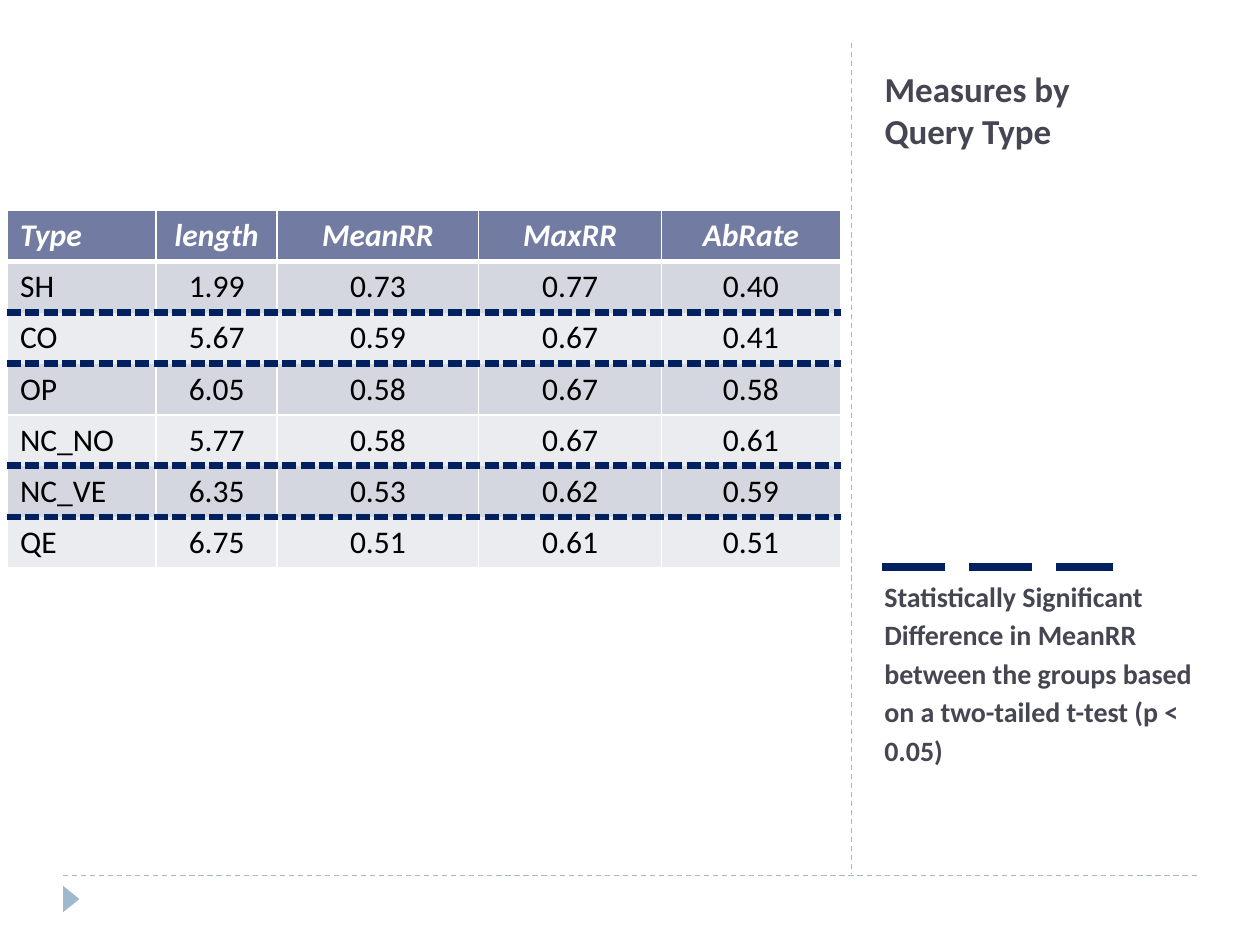
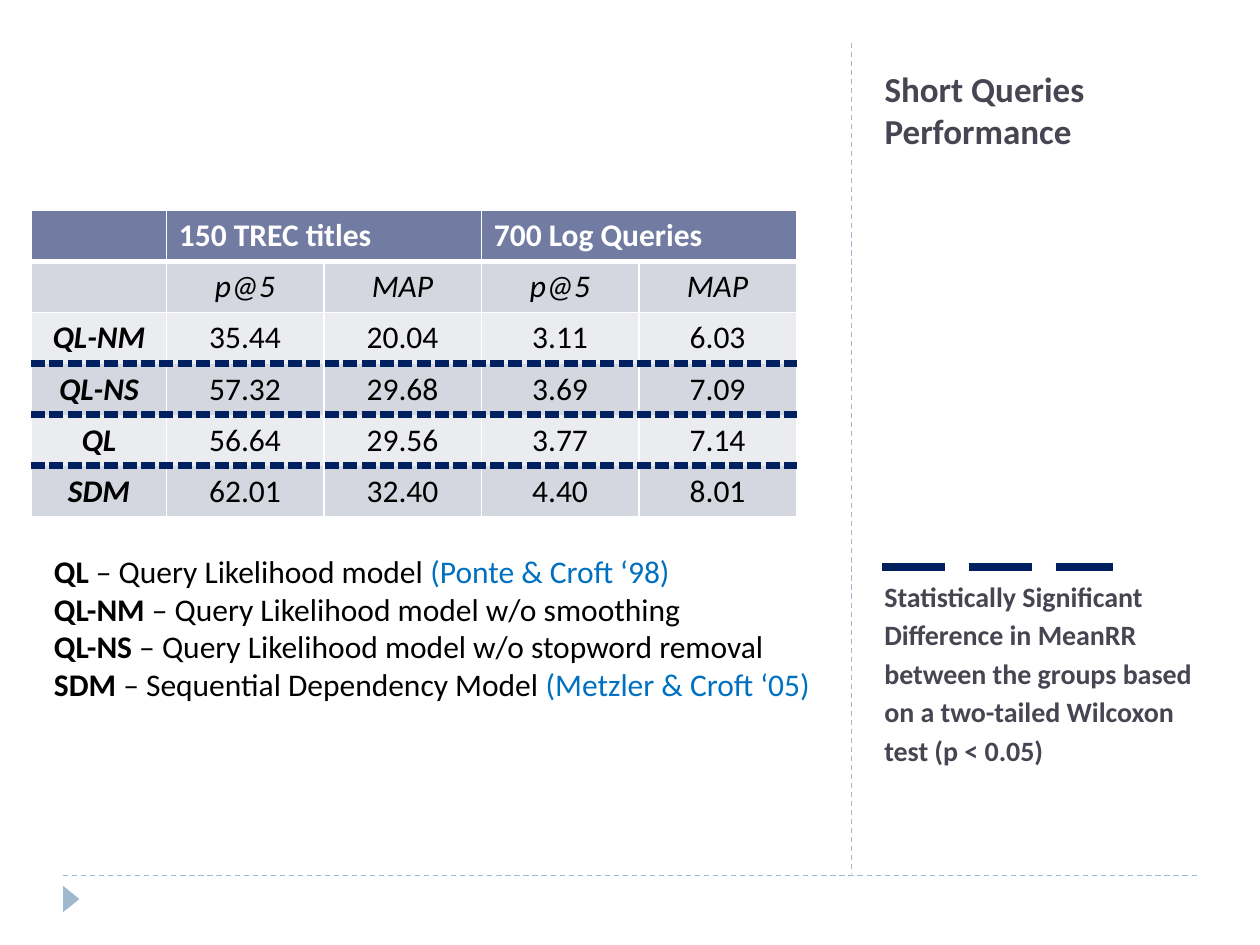
from lxml import etree
from pptx import Presentation
from pptx import util as u
from pptx.dml.color import RGBColor
from pptx.enum import dml, shapes, text
from pptx.oxml import ns

COLORS = {
    "white": "FFFFFF", "black": "000000", "heading": "464653", "guide": "9FB8CD",
    "significant": "002060", "citation": "0070C0",
    "header": "727CA3", "odd": "D5D7E0", "even": "EBECF0",
}
LEFT, CENTER = text.PP_ALIGN.LEFT, text.PP_ALIGN.CENTER
SIDEBAR_LEFT, SIDEBAR_WIDTH = 69.2, 27.5
TABLE_TOP, ROW_HEIGHT = 22.27, 5.4


class Deck:
    """Holds the style and the current slide; lengths are percent of the slide's size."""

    font = "Calibri"

    def __init__(self):
        self.prs = Presentation()
        self.prs.slide_width, self.prs.slide_height = u.Inches(10), u.Inches(7.5)
        self.slide = None

    def x(self, share):
        return round(self.prs.slide_width * share / 100)

    def y(self, share):
        return round(self.prs.slide_height * share / 100)

    def box(self, left, top, width, height):
        return self.x(left), self.y(top), self.x(width), self.y(height)

    def color(self, name):
        return RGBColor.from_string(COLORS[name])

    def run(self, paragraph, words, size, color="black", face=""):
        run = paragraph.add_run()
        run.text = words
        font = run.font
        font.name, font.size = self.font, u.Pt(size)
        font.bold, font.italic = "b" in face, "i" in face
        font.color.rgb = self.color(color)

    def line(self, start, end, color, width, dash):
        line = self.slide.shapes.add_connector(
            shapes.MSO_CONNECTOR.STRAIGHT,
            self.x(start[0]), self.y(start[1]), self.x(end[0]), self.y(end[1]))
        line.line.color.rgb = self.color(color)
        line.line.width = u.Pt(width)
        line.line.dash_style = dash
        etree.SubElement(line._element.spPr, ns.qn("a:effectLst"))

    def marker(self, left, top, width, height):
        marker = self.slide.shapes.add_shape(
            shapes.MSO_SHAPE.ISOSCELES_TRIANGLE, *self.box(left, top, width, height))
        marker.rotation = 90
        marker.shadow.inherit = False
        marker.fill.solid()
        marker.fill.fore_color.rgb = self.color("guide")
        marker.line.fill.background()

    def title(self, lines):
        title = self.slide.shapes.title
        title.left, title.top, title.width, title.height = self.box(
            SIDEBAR_LEFT, 4.4, SIDEBAR_WIDTH, 12.27)
        frame = title.text_frame
        frame.vertical_anchor = text.MSO_ANCHOR.BOTTOM
        frame.auto_size = text.MSO_AUTO_SIZE.NONE
        heading = frame.paragraphs[0]
        heading.alignment = LEFT
        for index, words in enumerate(lines):
            if index:
                heading.add_line_break()
            self.run(heading, words, 20, "heading", "b")

    def new_slide(self, *title_lines):
        self.slide = self.prs.slides.add_slide(self.prs.slide_layouts[5])
        dash = dml.MSO_LINE.DASH
        self.line((5, 92.67), (95, 92.67), "guide", 0.75, dash)
        self.line((67.6, 4.53), (67.6, 92.53), "guide", 0.75, dash)
        self.marker(4.6, 94.27, 2.1, 1.73)
        self.title(title_lines)

    def paragraphs(self, box, lines, size, wrap=True, spacing=None):
        frame = self.slide.shapes.add_textbox(*self.box(*box)).text_frame
        frame.word_wrap = wrap
        for index, pieces in enumerate(lines):
            paragraph = frame.add_paragraph() if index else frame.paragraphs[0]
            paragraph.line_spacing = spacing
            for piece in pieces:
                self.run(paragraph, piece[0], size, *piece[1:])

    def significance_key(self, test):
        self.line((70, 60), (88.3, 60), "significant", 4.5, dml.MSO_LINE.LONG_DASH)
        note = ("Statistically Significant Difference in MeanRR between the groups "
                f"based on a two-tailed {test} (p < 0.05)")
        self.paragraphs((SIDEBAR_LEFT, 60.13, SIDEBAR_WIDTH, 28.2),
                        [[(note, "heading", "b")]], 16, spacing=u.Pt(22))

    def border(self, cell, index, side, color, width, dash):
        edge = etree.Element(ns.qn(f"a:ln{side}"), w=str(u.Pt(width)))
        fill = etree.SubElement(edge, ns.qn("a:solidFill"))
        etree.SubElement(fill, ns.qn("a:srgbClr"), val=COLORS[color])
        etree.SubElement(edge, ns.qn("a:prstDash"), val=dash)
        cell._tc.get_or_add_tcPr().insert(index, edge)

    def table(self, left, widths, rows, significant_after, dash, face, align, merges=()):
        table = self.slide.shapes.add_table(len(rows), len(widths), *self.box(
            left, TABLE_TOP, sum(widths), ROW_HEIGHT * len(rows))).table
        for column, width in zip(table.columns, widths):
            column.width = self.x(width)
        for row, first, last in merges:
            table.cell(row, first).merge(table.cell(row, last))
        thin = ("white", 1, "solid")
        below = {0: ("white", 3, "solid")}
        below.update({row: ("significant", 4.5, dash) for row in significant_after})
        for r, values in enumerate(rows):
            table.rows[r].height = self.y(ROW_HEIGHT)
            band = "header" if r == 0 else "odd" if r % 2 else "even"
            for c, value in enumerate(values):
                cell = table.cell(r, c)
                cell.fill.solid()
                cell.fill.fore_color.rgb = self.color(band)
                if cell.is_spanned:
                    continue
                edges = (thin, thin, below.get(r - 1, thin), below.get(r, thin))
                for index, (side, edge) in enumerate(zip("LRTB", edges)):
                    self.border(cell, index, side, *edge)
                if value:
                    paragraph = cell.text_frame.paragraphs[0]
                    paragraph.alignment = align(r, c)
                    self.run(paragraph, value, 18, "black" if r else "white", face(r, c))


def query_types(deck):
    """Measures of each query type."""
    deck.new_slide("Measures by ", "Query Type")
    measures = [
        ("Type", "length", "MeanRR", "MaxRR", "AbRate"),
        ("SH", "1.99", "0.73", "0.77", "0.40"),
        ("CO", "5.67", "0.59", "0.67", "0.41"),
        ("OP", "6.05", "0.58", "0.67", "0.58"),
        ("NC_NO", "5.77", "0.58", "0.67", "0.61"),
        ("NC_VE", "6.35", "0.53", "0.62", "0.59"),
        ("QE", "6.75", "0.51", "0.61", "0.51"),
    ]
    deck.table(0.6, (11.8, 9.6, 16, 14.5, 14.2), measures, (1, 2, 4, 5), "lgDash",
               face=lambda r, c: "" if r else "bi",
               align=lambda r, c: CENTER if c else LEFT)
    deck.significance_key("t-test")


def short_queries(deck):
    """Performance of retrieval models on short queries."""
    deck.new_slide("Short Queries Performance")
    performance = [
        ("", "150 TREC titles", "", "700 Log Queries", ""),
        ("", "p@5", "MAP", "p@5", "MAP"),
        ("QL-NM", "35.44", "20.04", "3.11", "6.03"),
        ("QL-NS", "57.32", "29.68", "3.69", "7.09"),
        ("QL", "56.64", "29.56", "3.77", "7.14"),
        ("SDM", "62.01", "32.40", "4.40", "8.01"),
    ]
    faces = {0: "b", 1: "i"}
    deck.table(2.5, (10.7,) + (12.5,) * 4, performance, (2, 3, 4), "dash",
               face=lambda r, c: faces.get(r, "" if c else "bi"),
               align=lambda r, c: CENTER if r else LEFT,
               merges=((0, 1, 2), (0, 3, 4)))
    deck.significance_key("Wilcoxon test")
    models = [
        ("QL", " – Query Likelihood model ", "(Ponte & Croft ‘98)"),
        ("QL-NM", " – Query Likelihood model w/o smoothing", ""),
        ("QL-NS", " – Query Likelihood model w/o stopword removal", ""),
        ("SDM", " – Sequential Dependency Model ", "(Metzler & Croft ‘05)"),
    ]
    glossary = []
    for model, meaning, source in models:
        citation = [(source, "citation")] if source else []
        glossary.append([(model, "black", "b"), (meaning,), *citation])
    deck.paragraphs((3.3, 57.73, 64.4, 17.47), glossary, 18, wrap=False)


def main():
    deck = Deck()
    query_types(deck)
    short_queries(deck)
    deck.prs.save("out.pptx")


if __name__ == "__main__":
    main()
